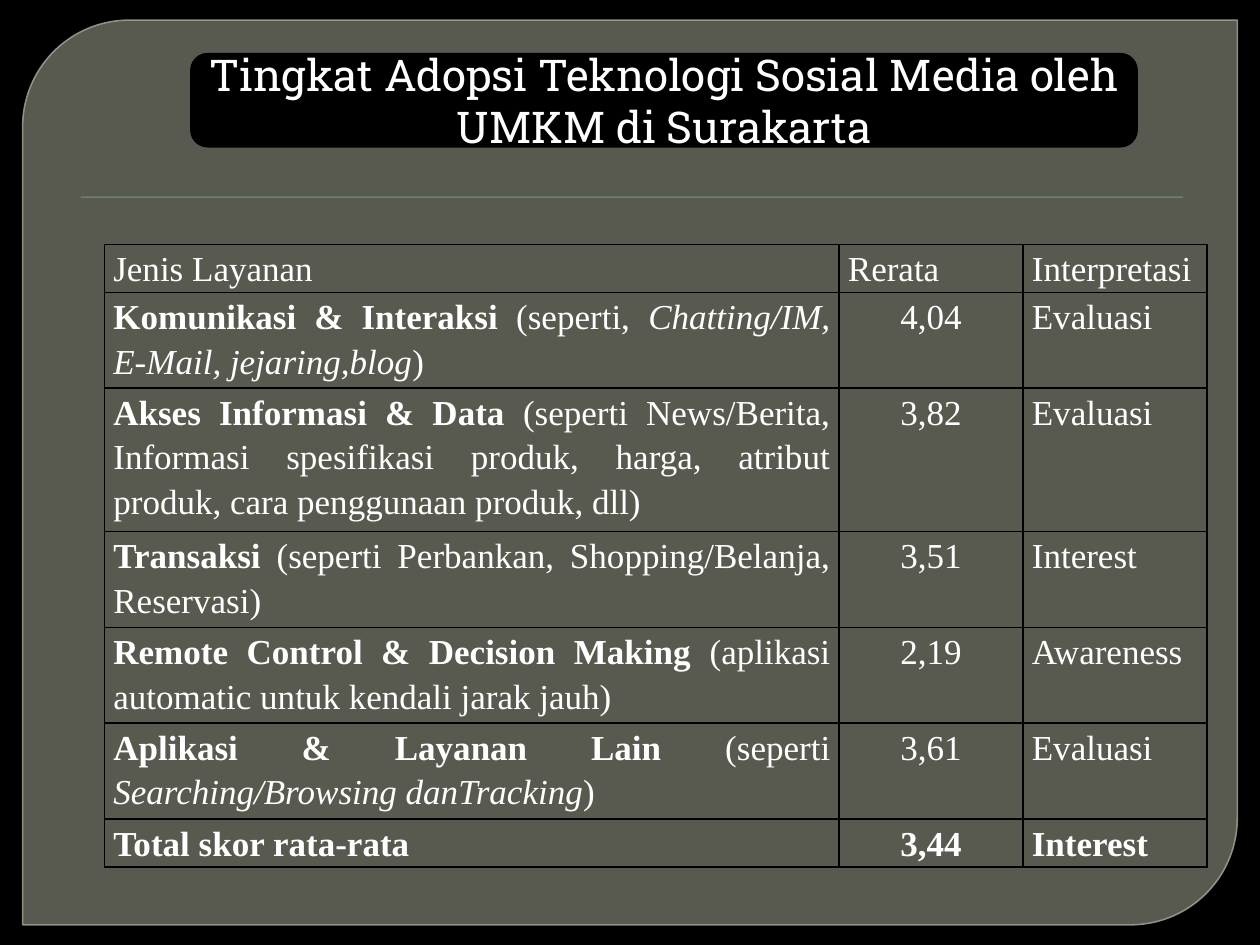
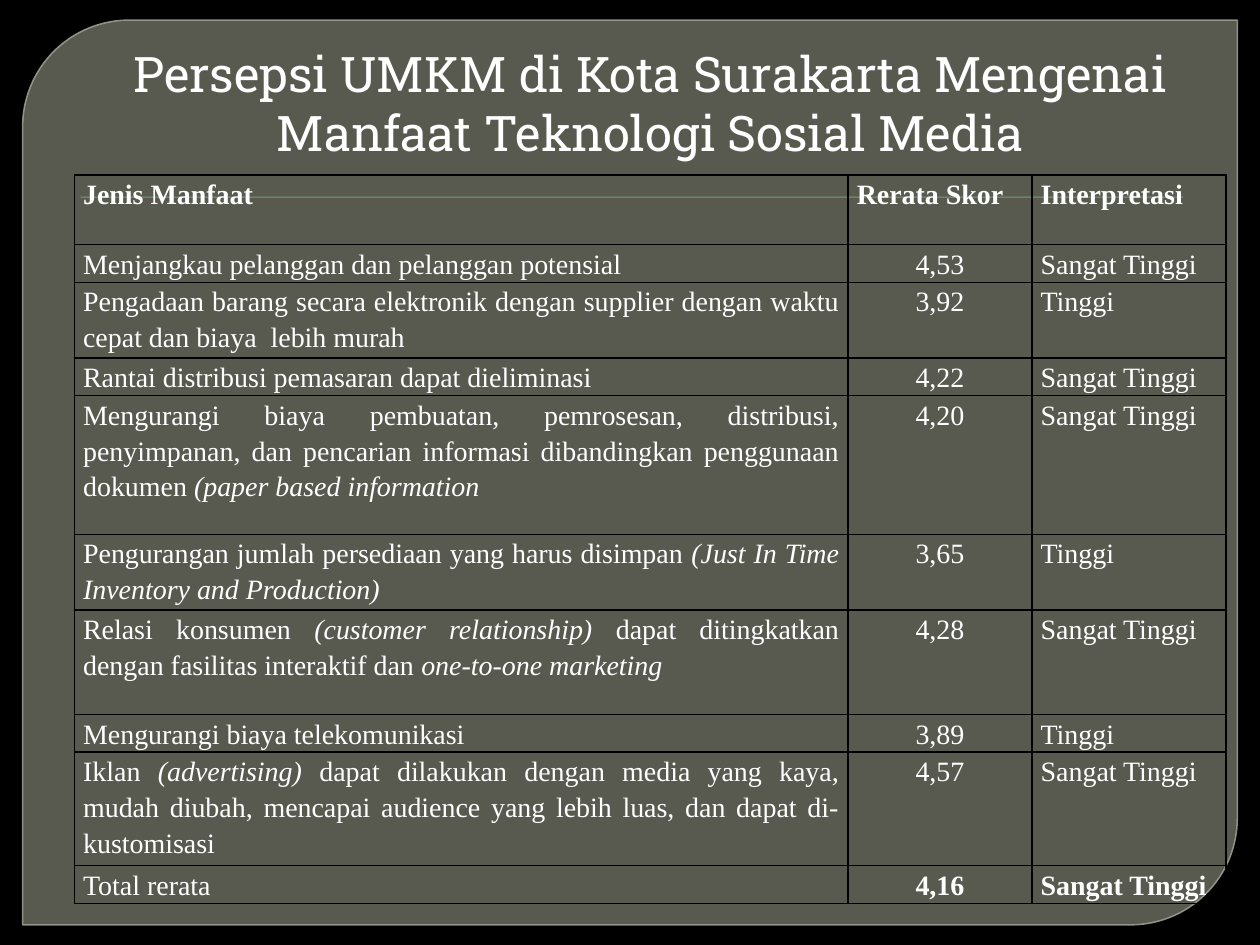
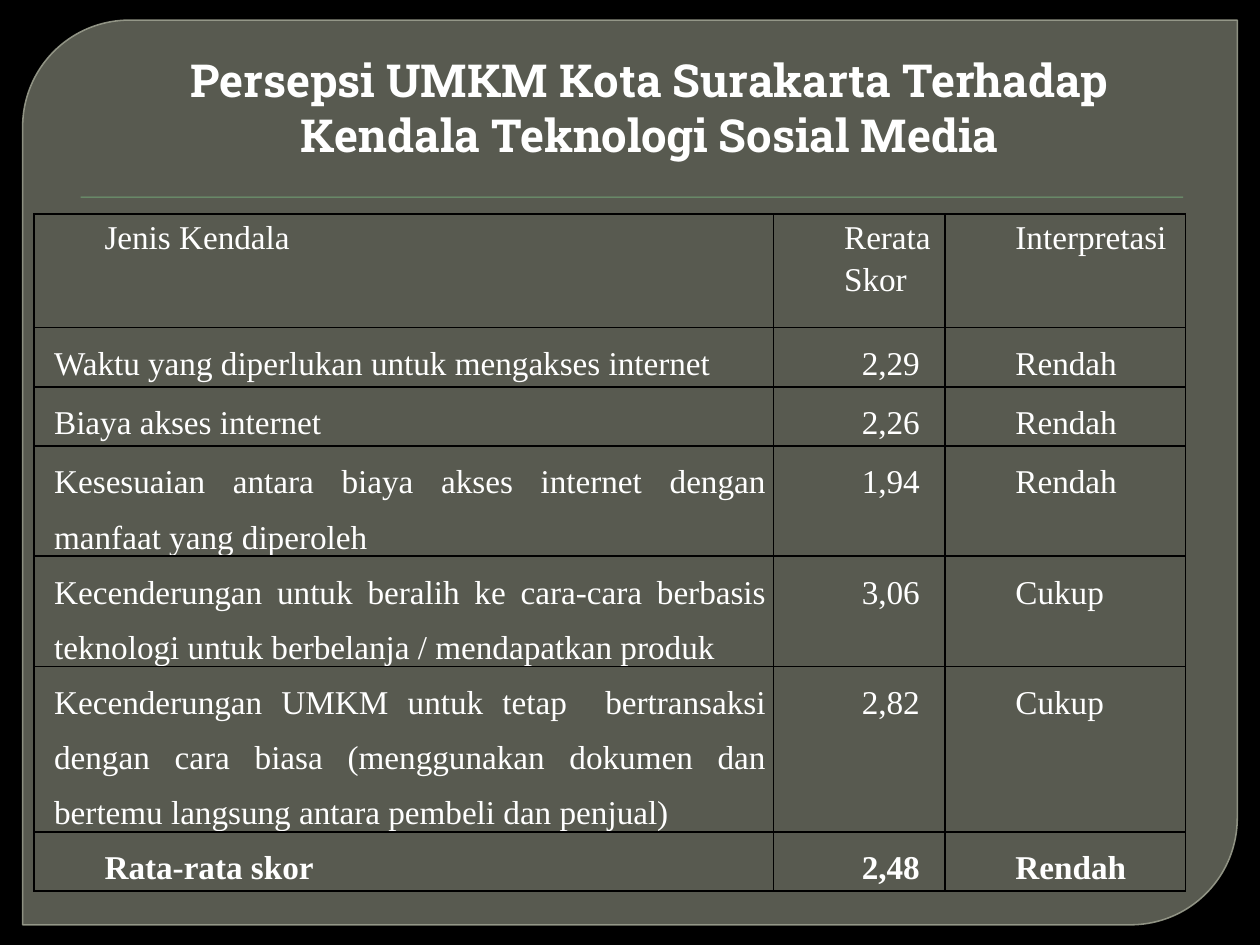
from lxml import etree
from pptx import Presentation
from pptx.dml.color import RGBColor
from pptx.enum import shapes, text
from pptx.oxml import ns
from pptx.util import Inches, Pt

HUES = {"back": "000000", "panel": "888B7B", "edge": "9DA090",
        "rule": "72A376", "ink": "FFFFFF", "grid": "000000"}
HEAD, BODY = "Roboto Slab", "Times New Roman"
JUST, MID = text.PP_ALIGN.JUSTIFY, text.PP_ALIGN.CENTER


def bold(words):
    return words, "b"


def ital(words):
    return words, "i"


# A cell is a string, or a list of strings and (words, style) pairs.
USES = [
    ("Jenis Layanan", "Rerata", "Interpretasi"),
    ([bold("Komunikasi & Interaksi"), " (seperti, ",
      ital("Chatting/IM, E-Mail, jejaring,blog"), ")"], "4,04", "Evaluasi"),
    ([bold("Akses Informasi & Data"),
      " (seperti News/Berita, Informasi spesifikasi produk, harga, "
      "atribut produk, cara penggunaan produk, dll)"], "3,82", "Evaluasi"),
    ([bold("Transaksi"), " (seperti Perbankan, Shopping/Belanja, Reservasi)"],
     "3,51", "Interest"),
    ([bold("Remote Control & Decision Making"),
      " (aplikasi automatic untuk kendali jarak jauh)"], "2,19", "Awareness"),
    ([bold("Aplikasi & Layanan Lain"), " (seperti ",
      ital("Searching/Browsing danTracking"), ")"], "3,61", "Evaluasi"),
    ([bold("Total skor rata-rata")], [bold("3,44")], [bold("Interest")]),
]
GAINS = [
    ([bold("Jenis Manfaat")], [bold("Rerata Skor")], [bold("Interpretasi")]),
    ("Menjangkau pelanggan dan pelanggan potensial", "4,53", "Sangat Tinggi"),
    ("Pengadaan barang secara elektronik dengan supplier dengan waktu "
     "cepat dan biaya  lebih murah", "3,92", "Tinggi"),
    ("Rantai distribusi pemasaran dapat dieliminasi", "4,22", "Sangat Tinggi"),
    (["Mengurangi biaya pembuatan, pemrosesan, distribusi, penyimpanan, dan "
      "pencarian informasi dibandingkan penggunaan dokumen ",
      ital("(paper based information")], "4,20", "Sangat Tinggi"),
    (["Pengurangan jumlah persediaan yang harus disimpan ",
      ital("(Just In Time Inventory and Production)")], "3,65", "Tinggi"),
    (["Relasi konsumen ", ital("(customer relationship)"),
      " dapat ditingkatkan dengan fasilitas interaktif dan ",
      ital("one-to-one marketing")], "4,28", "Sangat Tinggi"),
    ("Mengurangi biaya telekomunikasi", "3,89", "Tinggi"),
    (["Iklan ", ital("(advertising)"),
      " dapat dilakukan dengan media yang kaya, mudah diubah, mencapai "
      "audience yang lebih luas, dan dapat di-kustomisasi"],
     "4,57", "Sangat Tinggi"),
    ("Total rerata", [bold("4,16")], [bold("Sangat Tinggi")]),
]
CURBS = [
    ("Jenis Kendala", "Rerata Skor", "Interpretasi"),
    ("Waktu yang diperlukan untuk mengakses internet", "2,29", "Rendah"),
    ("Biaya akses internet", "2,26", "Rendah"),
    ("Kesesuaian antara biaya akses internet dengan manfaat yang diperoleh",
     "1,94", "Rendah"),
    ("Kecenderungan untuk beralih ke cara-cara berbasis teknologi untuk "
     "berbelanja / mendapatkan produk", "3,06", "Cukup"),
    ("Kecenderungan UMKM untuk tetap  bertransaksi dengan cara biasa "
     "(menggunakan dokumen dan bertemu langsung antara pembeli dan penjual)",
     "2,82", "Cukup"),
    ([bold("Rata-rata skor")], [bold("2,48")], [bold("Rendah")]),
]
DECK = [
    {"title": "Tingkat Adopsi Teknologi Sosial Media oleh UMKM di Surakarta",
     "size": 25, "boxed": True, "rows": USES, "at": (0.83, 1.94),
     "cols": (5.83, 1.46, 1.46), "font": 20, "pad": 0.07,
     "tall": (0.38, 0.76, 1.14, 0.76, 0.76, 0.76, 0.38)},
    {"title": "Persepsi UMKM di Kota Surakarta Mengenai Manfaat Teknologi "
              "Sosial Media",
     "size": 28, "rows": GAINS, "at": (0.59, 1.39),
     "cols": (6.14, 1.46, 1.54), "font": 16, "pad": 0.07,
     "tall": (0.55, 0.3, 0.6, 0.3, 1.1, 0.6, 0.83, 0.3, 0.9, 0.3)},
    {"title": "Persepsi UMKM Kota Surakarta Terhadap Kendala Teknologi "
              "Sosial Media",
     "size": 26, "bold": True, "rows": CURBS, "at": (0.27, 1.7),
     "cols": (5.87, 1.36, 1.91), "font": 19, "pad": 0.06, "inset": True,
     "tall": (0.9, 0.47, 0.47, 0.47, 0.71, 0.94, 0.47)},
]


def rgb(name):
    return RGBColor.from_string(HUES[name])


def sub(node, tag, **attrs):
    child = etree.SubElement(node, ns.qn(tag))
    for key, val in attrs.items():
        child.set(key, str(val))
    return child


def fade(fill, share):
    """Make a solid fill let (100 - share) percent through."""
    hue = fill._xPr.find(ns.qn("a:solidFill"))[0]
    sub(hue, "a:alpha", val=share * 1000)


def shape(slide, kind, box, fill, edge=None, width=1):
    part = slide.shapes.add_shape(kind, *map(Inches, box))
    part.shadow.inherit = False
    part.fill.solid()
    part.fill.fore_color.rgb = rgb(fill)
    if edge:
        part.line.color.rgb = rgb(edge)
        part.line.width = Pt(width)
    else:
        part.line.fill.background()
    return part


def frame(slide):
    """Draw the panel and rule behind everything else."""
    kinds = shapes.MSO_SHAPE
    panel = shape(slide, kinds.ROUND_2_DIAG_RECTANGLE,
                  (0.18, 0.16, 9.64, 7.18), "panel", "edge", 0.87)
    panel.adjustments[0], panel.adjustments[1] = 0.118, 0
    fade(panel.fill, 65)
    fade(panel.line.fill, 88)
    rule = shape(slide, kinds.RECTANGLE, (0.64, 1.56, 8.75, 0.01), "rule")
    glow = sub(rule._element.spPr.find(ns.qn("a:effectLst")), "a:outerShdw",
               blurRad=Pt(1), dist=Pt(1), dir=90 * 60000)
    sub(sub(glow, "a:srgbClr", val=HUES["back"]), "a:alpha", val=75000)
    for spot, part in enumerate((panel, rule), 2):
        slide.shapes._spTree.insert(spot, part._element)


def write(para, cell, face, size, heavy=False):
    for piece in [cell] if isinstance(cell, str) else cell:
        words, style = (piece, "") if isinstance(piece, str) else piece
        run = para.add_run()
        run.text = words
        font = run.font
        font.name, font.size, font.color.rgb = face, Pt(size), rgb("ink")
        font.bold, font.italic = heavy or style == "b", style == "i"


def indent(para, left):
    props = para._p.get_or_add_pPr()
    props.set("marL", str(Inches(left)))
    props.set("indent", "0")


def title(slide, page):
    boxed = page.get("boxed")
    if boxed:
        box = shape(slide, shapes.MSO_SHAPE.ROUNDED_RECTANGLE,
                    (1.53, 0.44, 7.48, 0.71), "back", "back", 3)
    else:
        box = slide.shapes.title
        box.left, box.top, box.width, box.height = map(
            Inches, (0.67, 0.25, 8.92, 1.08))
    body = box.text_frame
    body.word_wrap = True
    body.auto_size = text.MSO_AUTO_SIZE.NONE
    anchor = text.MSO_ANCHOR
    body.vertical_anchor = anchor.MIDDLE if boxed else anchor.BOTTOM
    para = body.paragraphs[0]
    para.alignment = MID
    if not boxed:
        indent(para, 0.06)
    write(para, page["title"], HEAD, page["size"], page.get("bold", False))


def border(cell):
    props = cell._tc.get_or_add_tcPr()
    for spot, side in enumerate(("a:lnL", "a:lnR", "a:lnT", "a:lnB")):
        line = sub(props, side, w=Pt(1))
        sub(sub(line, "a:solidFill"), "a:srgbClr", val=HUES["grid"])
        props.insert(spot, line)


def table(slide, page):
    rows, cols, tall = page["rows"], page["cols"], page["tall"]
    box = (*page["at"], sum(cols), sum(tall))
    grid = slide.shapes.add_table(len(rows), len(cols),
                                  *map(Inches, box)).table
    grid.first_row = grid.horz_banding = False
    for col, width in zip(grid.columns, cols):
        col.width = Inches(width)
    for r, (row, height) in enumerate(zip(rows, tall)):
        grid.rows[r].height = Inches(height)
        for c, words in enumerate(row):
            cell = grid.cell(r, c)
            cell.margin_left = cell.margin_right = Inches(page["pad"])
            cell.margin_top = cell.margin_bottom = 0
            cell.fill.background()
            border(cell)
            para = cell.text_frame.paragraphs[0]
            para.alignment = MID if c == 1 and r else JUST
            para.line_spacing = 1.15
            if page.get("inset"):
                inner = c == 0 and 0 < r < len(rows) - 1
                indent(para, 0.1 if inner else 0.5)
                para.line_spacing = 1.5 if r else 1.15
            write(para, words, BODY, page["font"])


def main():
    deck = Presentation()
    deck.slide_width, deck.slide_height = Inches(10), Inches(7.5)
    back = deck.slide_master.background.fill
    back.solid()
    back.fore_color.rgb = rgb("back")
    for page in DECK:
        layout = deck.slide_layouts[6 if page.get("boxed") else 5]
        slide = deck.slides.add_slide(layout)
        frame(slide)
        table(slide, page)
        title(slide, page)
    deck.save("out.pptx")


if __name__ == "__main__":
    main()
